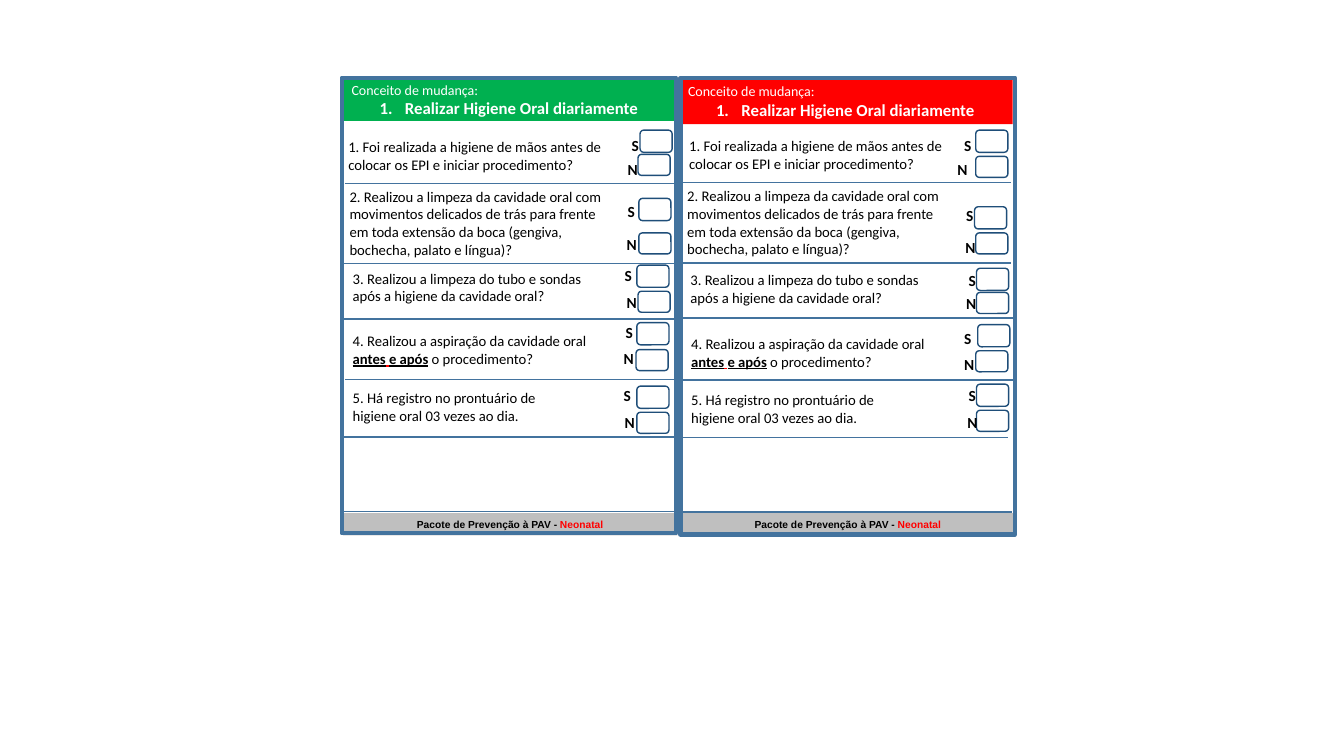
"""Builds a slide with two oral hygiene checklist cards, one green and one red."""
from lxml import etree
from pptx import Presentation
from pptx.dml.color import RGBColor
from pptx.enum.shapes import MSO_CONNECTOR, MSO_SHAPE
from pptx.enum.text import MSO_ANCHOR, PP_ALIGN
from pptx.oxml.ns import qn
from pptx.util import Cm, Pt

RECT, ROUNDED = MSO_SHAPE.RECTANGLE, MSO_SHAPE.ROUNDED_RECTANGLE
STRAIGHT = MSO_CONNECTOR.STRAIGHT
MIDDLE = MSO_ANCHOR.MIDDLE
LEFT, CENTER = PP_ALIGN.LEFT, PP_ALIGN.CENTER

BLACK, WHITE, RED, GREEN, GRAY = "000000", "FFFFFF", "FF0000", "00B050", "BFBFBF"
FRAME_BLUE, BOX_BLUE = "43739E", "1F4E79"
CARD_WIDTH, RULE_LENGTH = 8.43, 8.41
TICK_WIDTH, LABEL_WIDTH = 0.81, 0.58
TICK_HEIGHTS = {"S": 0.56, "N": 0.53}
LABEL_HEIGHTS = {"S": 0.41, "N": 0.36}

BODY = {"name": "Calibri", "size": Pt(10.5), "color": BLACK}
STRESSED = BODY | {"bold": True, "underline": True}
LABEL = {"name": "Calibri", "size": Pt(11), "bold": True, "color": BLACK}
CONCEPT = {"name": "Calibri", "size": Pt(10), "color": WHITE}
TITLE = {"name": "Calibri", "size": Pt(12), "bold": True, "color": WHITE}
FOOTER = {"name": "Arial", "size": Pt(7.3), "bold": True, "color": BLACK}

QUESTIONS = [
    (6.93, 1.24, [("1. Foi realizada a higiene de mãos antes de colocar os EPI "
                   "e iniciar procedimento?", BODY)]),
    (7.25, 1.55, [("2. Realizou a limpeza da cavidade oral com movimentos delicados "
                   "de trás para frente em toda extensão da boca (gengiva, bochecha, "
                   "palato e língua)?", BODY)]),
    (6.38, 1.12, [("3. Realizou a limpeza do tubo e sondas após a higiene da "
                   "cavidade oral?", BODY)]),
    (6.96, 1.37, [("4. Realizou a aspiração da cavidade oral ", BODY),
                  ("antes", STRESSED), (" ", STRESSED | {"color": RED}),
                  ("e após", STRESSED), (" o procedimento?", BODY)]),
    (5.9, 1.14, [("5. Há registro no prontuário de higiene oral 03 vezes ao dia.", BODY)]),
]

CARDS = [
    {"color": GREEN, "header": (8.61, 1.98, 1.07), "frame": (8.61, 1.96, 11.48),
     "footer": (8.64, 12.93, 0.56), "last_rule": (8.59, 12.89),
     "rows": [
         {"question": (8.53, 3.3), "rule": (8.69, 4.62),
          "S": (16.13, 3.28, 15.67, 3.47), "N": (16.08, 3.89, 15.57, 4.09)},
         {"question": (8.56, 4.84), "rule": (8.66, 6.64),
          "S": (16.1, 5, 15.57, 5.11), "N": (16.1, 5.87, 15.54, 5.99)},
         {"question": (8.64, 6.68), "rule": (8.64, 8.04),
          "S": (16.05, 6.68, 15.49, 6.73), "N": (16.08, 7.34, 15.54, 7.44)},
         {"question": (8.64, 8.13), "rule": (8.69, 9.56),
          "S": (16.05, 8.13, 15.52, 8.18), "N": (16.03, 8.81, 15.47, 8.86)},
         {"question": (8.64, 9.68), "rule": (8.59, 11.01),
          "S": (16.05, 9.73, 15.47, 9.75), "N": (16.05, 10.39, 15.49, 10.46)},
     ]},
    {"color": RED, "header": (17.09, 1.96, 1.17), "frame": (17.15, 1.96, 11.51),
     "footer": (17.15, 12.93, 0.56), "last_rule": (17.09, 12.9),
     "rows": [
         {"question": (17.12, 3.28), "rule": (17.07, 4.6),
          "S": (24.59, 3.28, 24.05, 3.45), "N": (24.59, 3.94, 23.88, 4.09)},
         {"question": (17.07, 4.83), "rule": (17.07, 6.63),
          "S": (24.56, 5.21, 24.1, 5.21), "N": (24.59, 5.87, 24.08, 6.05)},
         {"question": (17.15, 6.71), "rule": (17.12, 8.01),
          "S": (24.61, 6.76, 24.16, 6.86), "N": (24.61, 7.37, 24.1, 7.47)},
         {"question": (17.17, 8.2), "rule": (17.17, 9.58),
          "S": (24.64, 8.18, 24.05, 8.33), "N": (24.59, 8.84, 24.05, 8.99)},
         {"question": (17.17, 9.73), "rule": (16.99, 11.02),
          "S": (24.61, 9.68, 24.16, 9.75), "N": (24.61, 10.34, 24.13, 10.46)},
     ]},
]

prs = Presentation()
prs.slide_width, prs.slide_height = Cm(33.87), Cm(19.05)
slide = prs.slides.add_slide(prs.slide_layouts[6])
shapes = slide.shapes


def rgb(color):
    return RGBColor.from_string(color)


def add_block(kind, left, top, width, height, paragraphs=(), fill=None, line=None, weight=1):
    bounds = [Cm(value) for value in (left, top, width, height)]
    if kind is None:
        block = shapes.add_textbox(*bounds)
    else:
        block = shapes.add_shape(kind, *bounds)
        block.shadow.inherit = False
    if fill:
        block.fill.solid()
        block.fill.fore_color.rgb = rgb(fill)
    else:
        block.fill.background()
    if line:
        block.line.color.rgb = rgb(line)
        block.line.width = Pt(weight)
    else:
        block.line.fill.background()
    frame = block.text_frame
    frame.word_wrap = True
    frame.vertical_anchor = MIDDLE
    for index, (alignment, runs) in enumerate(paragraphs):
        paragraph = frame.add_paragraph() if index else frame.paragraphs[0]
        paragraph.alignment = alignment
        for text, style in runs:
            run = paragraph.add_run()
            run.text = text
            for key, value in style.items():
                if key == "color":
                    run.font.color.rgb = rgb(value)
                else:
                    setattr(run.font, key, value)
    return block


for card in CARDS:
    left, top, height = card["footer"]
    add_block(RECT, left, top, CARD_WIDTH, height, fill=GRAY, paragraphs=[
        (CENTER, [("Pacote de Prevenção à PAV - ", FOOTER),
                  ("Neonatal", FOOTER | {"color": RED})])])

    left, top, height = card["header"]
    header = add_block(RECT, left, top, CARD_WIDTH, height, fill=card["color"], paragraphs=[
        (LEFT, [("Conceito de mudança:", CONCEPT)]),
        (CENTER, [("Realizar Higiene Oral diariamente", TITLE)])])
    numbering = header.text_frame.paragraphs[1]._p.get_or_add_pPr()
    numbering.set("marL", str(Cm(0.64)))
    numbering.set("indent", str(-Cm(0.64)))
    etree.SubElement(numbering, qn("a:buFont"), typeface="+mj-lt")
    etree.SubElement(numbering, qn("a:buAutoNum"), type="arabicPeriod")

    left, top, height = card["frame"]
    add_block(RECT, left, top, CARD_WIDTH, height, line=FRAME_BLUE, weight=3)

    for left, top in [row["rule"] for row in card["rows"]] + [card["last_rule"]]:
        rule = shapes.add_connector(STRAIGHT, Cm(left), Cm(top), Cm(left + RULE_LENGTH), Cm(top))
        rule.line.color.rgb = rgb(FRAME_BLUE)
        rule.line.width = Pt(1)
        etree.SubElement(rule._element.spPr, qn("a:effectLst"))

    for row, (width, height, question) in zip(card["rows"], QUESTIONS):
        add_block(None, *row["question"], width, height, [(LEFT, question)])
        for answer in ("S", "N"):
            tick_left, tick_top, label_left, label_top = row[answer]
            add_block(ROUNDED, tick_left, tick_top, TICK_WIDTH, TICK_HEIGHTS[answer],
                      line=BOX_BLUE)
            add_block(None, label_left, label_top, LABEL_WIDTH, LABEL_HEIGHTS[answer],
                      [(CENTER, [(answer, LABEL)])])

prs.save("out.pptx")
